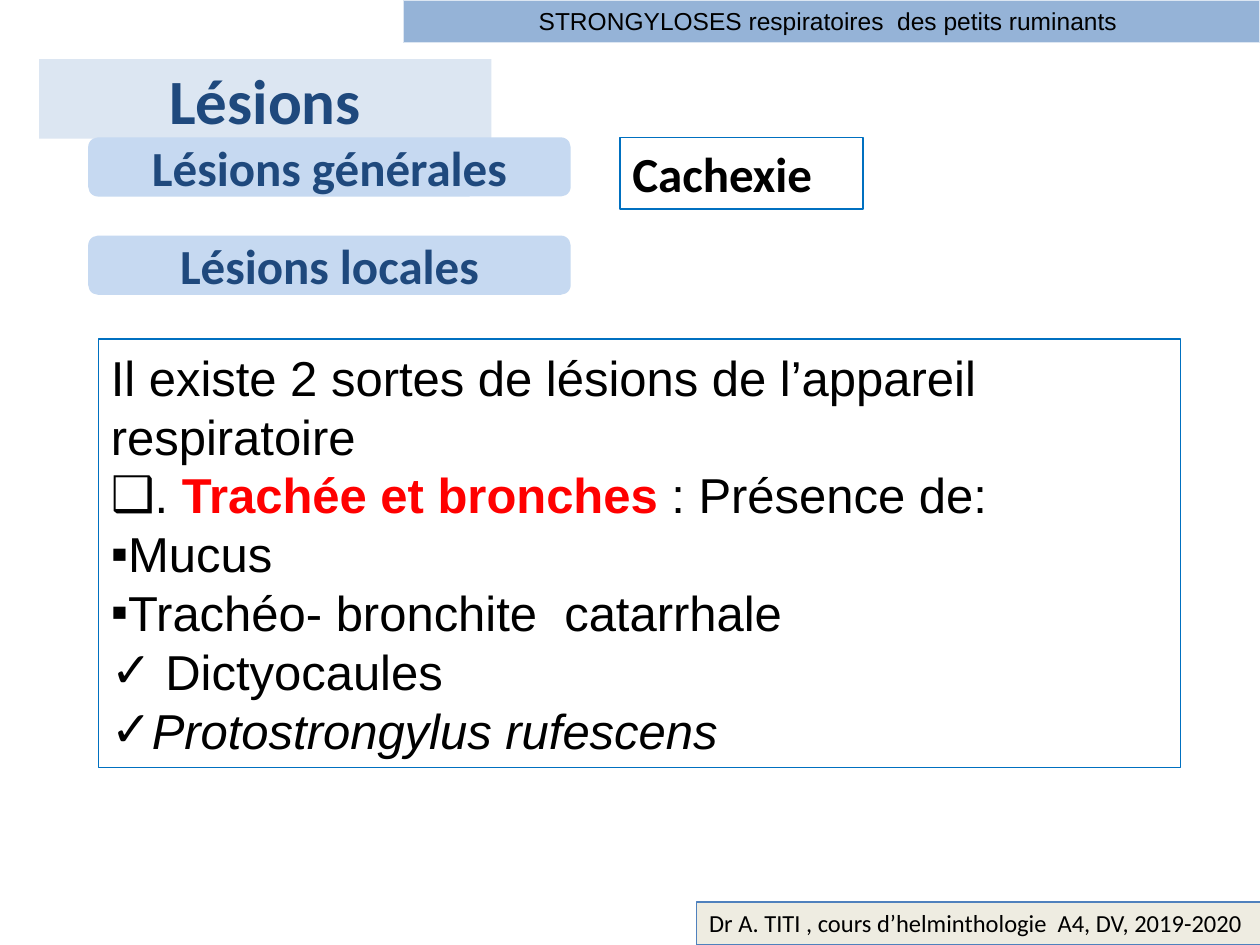
from dataclasses import dataclass
from typing import Optional

from lxml import etree
from pptx import Presentation, util as u
from pptx.dml.color import RGBColor
from pptx.enum import shapes, text
from pptx.oxml.ns import qn

RECT, ROUND = shapes.MSO_SHAPE.RECTANGLE, shapes.MSO_SHAPE.ROUNDED_RECTANGLE
TOP, MIDDLE = text.MSO_ANCHOR.TOP, text.MSO_ANCHOR.MIDDLE
LEFT, CENTER = text.PP_ALIGN.LEFT, text.PP_ALIGN.CENTER


@dataclass(frozen=True)
class Theme:
    heading: str = "Calibri"
    body: str = "Arial"
    ink: str = "000000"
    navy: str = "1F497D"
    red: str = "FF0000"
    pale: str = "DCE6F2"
    light: str = "C6D9F1"
    band: str = "95B3D7"
    cream: str = "EEECE1"
    edge: str = "0070C0"
    footer_edge: str = "4F81BD"
    title_size: int = 36
    text_size: int = 28
    small_size: int = 14


T = Theme()


@dataclass(frozen=True)
class Run:
    text: str
    font: str = T.body
    size: int = T.text_size
    color: str = T.ink
    bold: bool = False
    italic: bool = False


@dataclass(frozen=True)
class Para:
    runs: tuple[Run, ...]
    bullet: Optional[str] = None


@dataclass(frozen=True)
class Box:
    at: tuple[float, float, float, float]
    paras: tuple[Para, ...]
    shape: shapes.MSO_SHAPE = RECT
    fill: Optional[str] = None
    line: Optional[str] = None
    align: text.PP_ALIGN = LEFT
    anchor: text.MSO_ANCHOR = TOP


def label(words: str, **fmt) -> tuple[Para, ...]:
    return (Para((Run(words, **fmt),)),)


def set_bullet(p, char: Optional[str]) -> None:
    pPr = p._p.get_or_add_pPr()
    for name in ("marL", "indent"):
        pPr.set(name, "0")
    if char:
        etree.SubElement(pPr, qn("a:buChar")).set("char", char)
    else:
        etree.SubElement(pPr, qn("a:buNone"))


def write(tf, box: Box) -> None:
    frame = {"word_wrap": True, "auto_size": text.MSO_AUTO_SIZE.NONE,
             "vertical_anchor": box.anchor}
    for name, value in frame.items():
        setattr(tf, name, value)
    for i, para in enumerate(box.paras):
        p = tf.add_paragraph() if i else tf.paragraphs[0]
        p.alignment, p.space_before = box.align, u.Pt(0)
        set_bullet(p, para.bullet)
        for run in para.runs:
            r = p.add_run()
            r.text = run.text
            fmt = {"name": run.font, "size": u.Pt(run.size),
                   "bold": run.bold, "italic": run.italic}
            for name, value in fmt.items():
                setattr(r.font, name, value)
            r.font.color.rgb = RGBColor.from_string(run.color)


def paint(sp, box: Box) -> None:
    if box.fill:
        sp.fill.solid()
        sp.fill.fore_color.rgb = RGBColor.from_string(box.fill)
    else:
        sp.fill.background()
    if box.line:
        sp.line.color.rgb = RGBColor.from_string(box.line)
        sp.line.width = u.Pt(0.75)
    else:
        sp.line.fill.background()


def draw(s, box: Box) -> None:
    sp = s.shapes.add_shape(box.shape, *map(u.Inches, box.at))
    sp.shadow.inherit = False
    paint(sp, box)
    write(sp.text_frame, box)


def fill_placeholder(sp, box: Box) -> None:
    for name, value in zip(("left", "top", "width", "height"), box.at):
        setattr(sp, name, u.Inches(value))
    # Placeholders take their outline from XML
    geom = etree.SubElement(sp._element.spPr, qn("a:prstGeom"))
    geom.set("prst", "roundRect" if box.shape == ROUND else "rect")
    etree.SubElement(geom, qn("a:avLst"))
    paint(sp, box)
    write(sp.text_frame, box)


def section(words: str, top: float) -> Box:
    return Box((0.7, top, 3.83, 0.47),
               label(words, font=T.heading, color=T.navy, bold=True),
               ROUND, T.light, align=CENTER, anchor=MIDDLE)


TITLE = Box((0.31, 0.47, 3.59, 0.63),
            label("Lésions", font=T.heading, size=T.title_size, color=T.navy, bold=True),
            ROUND, T.pale, align=CENTER, anchor=MIDDLE)

LESIONS = Box((0.78, 2.69, 8.59, 3.4), (
    Para((Run("Il existe 2 sortes de lésions de l’appareil respiratoire"),)),
    Para((Run(". "), Run("Trachée et bronches", color=T.red, bold=True),
          Run(" : Présence de:")), "❑"),
    Para((Run("Mucus"),), "▪"),
    Para((Run("Trachéo- bronchite  catarrhale"),), "▪"),
    Para((Run(" Dictyocaules"),), "✓"),
    Para((Run("Protostrongylus rufescens", italic=True),), "✓"),
), line=T.edge, anchor=MIDDLE)

BOXES = (
    section("Lésions générales", 1.09),
    Box((4.92, 1.09, 1.93, 0.57), label("Cachexie", font=T.heading, bold=True), line=T.edge),
    section("Lésions locales", 1.87),
    # Footer and header bands
    Box((5.53, 7.16, 4.53, 0.34),
        label("Dr A. TITI , cours d’helminthologie  A4, DV, 2019-2020",
              font=T.heading, size=T.small_size),
        fill=T.cream, line=T.footer_edge),
    Box((3.2, 0, 6.8, 0.34),
        label("STRONGYLOSES respiratoires  des petits ruminants ", size=T.small_size),
        fill=T.band, line=T.pale, align=CENTER),
)


def main() -> None:
    prs = Presentation()
    prs.slide_width, prs.slide_height = u.Inches(10), u.Inches(7.5)
    s = prs.slides.add_slide(prs.slide_layouts[1])
    fill_placeholder(s.shapes.title, TITLE)
    fill_placeholder(s.placeholders[1], LESIONS)
    for box in BOXES:
        draw(s, box)
    prs.save("out.pptx")


if __name__ == "__main__":
    main()
